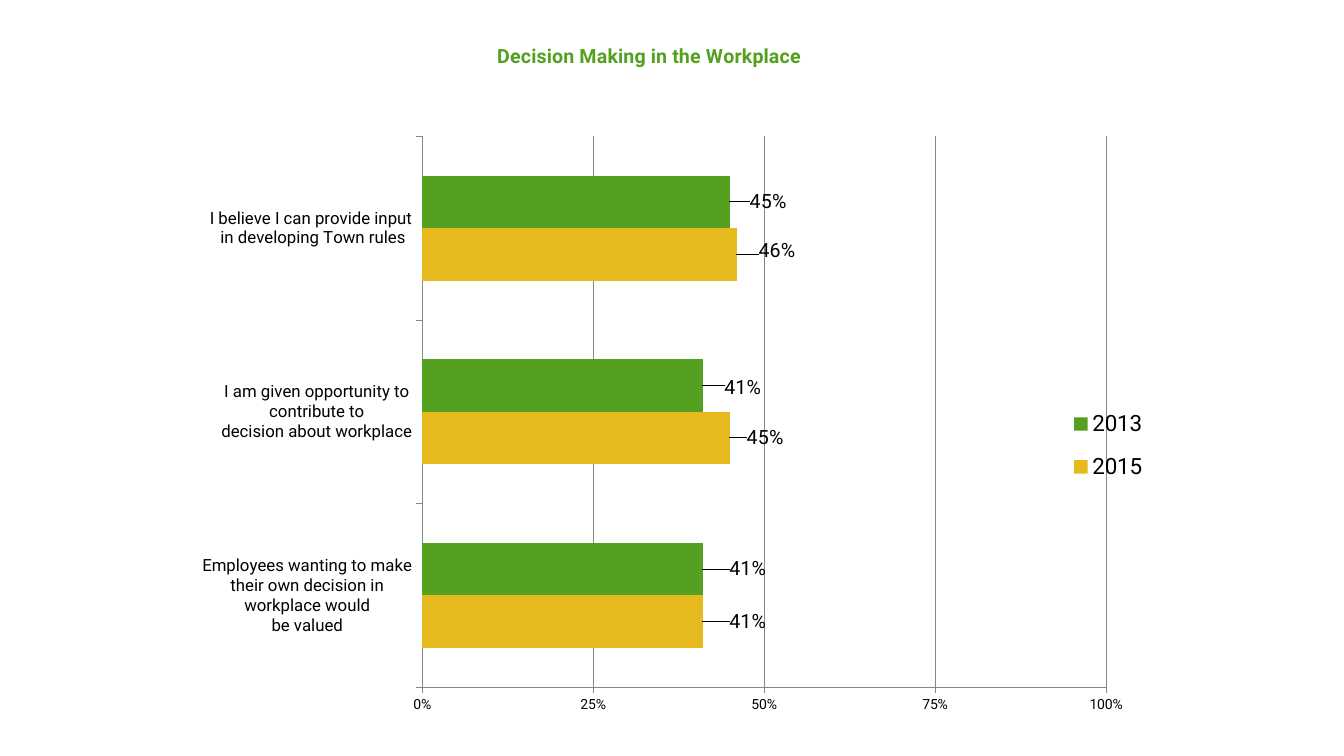
from lxml import etree
from pptx import Presentation
from pptx import util as u
from pptx.chart import data
from pptx.dml import color
from pptx.enum import chart as ch
from pptx.oxml import ns

FONT = "Roboto"
GREEN, GOLD, BLACK, GREY = "54A021", "E6B91E", "000000", "868686"

STATEMENTS = [
    "Employees wanting to make\ntheir own decision in\nworkplace would\nbe valued",
    "I am given opportunity to contribute to\ndecision about workplace",
    "I believe I can provide input\n in developing Town rules",
]
# Year: colour, agreement per statement, label shift (x, y) per statement in % of the chart
SURVEYS = {
    "2015": (GOLD, (0.41, 0.45, 0.46), ((2.3, 0), (1.3, 0), (1.8, -0.5))),
    "2013": (GREEN, (0.41, 0.41, 0.45), ((2.3, 0), (1.8, 0.3), (1.6, 0))),
}


def rgb(value):
    return color.RGBColor.from_string(value)


class SurveySlide:
    """Holds the style and the current slide."""

    def __init__(self, deck, font):
        self.font = font
        self.slide = deck.slides.add_slide(deck.slide_layouts[6])

    def style(self, font, size, colour=BLACK, bold=False):
        font.name, font.size, font.bold = self.font, u.Pt(size), bold
        font.color.rgb = rgb(colour)

    def place(self, part, **settings):
        """Give a chart part a manual layout, in schema order."""
        for old in part.findall(ns.qn("c:layout")):
            part.remove(old)
        leading = [ns.qn(tag) for tag in ("c:idx", "c:tx", "c:legendPos")]
        layout = etree.Element(ns.qn("c:layout"))
        manual = etree.SubElement(layout, ns.qn("c:manualLayout"))
        for tag, value in settings.items():
            etree.SubElement(manual, ns.qn("c:" + tag)).set("val", str(value))
        part.insert(sum(child.tag in leading for child in part), layout)

    def bar_chart(self, left, top, width, height, categories, surveys):
        content = data.CategoryChartData(number_format="0%")
        content.categories = categories
        for year, (_, shares, _) in surveys.items():
            content.add_series(year, shares)
        chart = self.slide.shapes.add_chart(
            ch.XL_CHART_TYPE.BAR_CLUSTERED, u.Pt(left), u.Pt(top),
            u.Pt(width), u.Pt(height), content).chart
        self.style(chart.font, 10)
        plot = chart.plots[0]
        plot.gap_width, plot.overlap, plot.vary_by_categories = 150, 0, False
        self.place(chart._chartSpace.chart.plotArea, layoutTarget="inner",
                   xMode="edge", yMode="edge", x=0.248, y=0.162, w=0.69, h=0.745)
        return chart

    def heading(self, chart, wording, x, y):
        title = chart.chart_title
        run = title.text_frame.paragraphs[0].add_run()
        run.text = wording
        self.style(run.font, 14, GREEN, bold=True)
        self.place(title._element, xMode="edge", yMode="edge", x=x, y=y)
        title._element.find(ns.qn("c:overlay")).set("val", "1")

    def axis(self, axis, size):
        self.style(axis.tick_labels.font, size)
        axis.major_tick_mark = ch.XL_TICK_MARK.OUTSIDE
        axis.minor_tick_mark = ch.XL_TICK_MARK.NONE
        self.line(axis.format.line)

    def line(self, line):
        line.color.rgb, line.width = rgb(GREY), u.Pt(0.75)

    def percent_scale(self, axis):
        axis.minimum_scale, axis.maximum_scale, axis.major_unit = 0, 1, 0.25
        axis.has_major_gridlines = True
        self.line(axis.major_gridlines.format.line)
        axis.tick_labels.number_format = "0%"
        axis.tick_labels.number_format_is_linked = False

    def bars(self, series, colour, shifts):
        series.format.fill.solid()
        series.format.fill.fore_color.rgb = rgb(colour)
        series.invert_if_negative = False
        labels = series.data_labels
        labels.show_value = True
        labels.number_format, labels.number_format_is_linked = "0%", False
        self.style(labels.font, 14)
        for index, (x, y) in enumerate(shifts):
            label = series.points[index].data_label
            self.style(label.font, 14)
            label.position = ch.XL_LABEL_POSITION.OUTSIDE_END
            mark = series._element.xpath(f"c:dLbls/c:dLbl[c:idx/@val='{index}']")[0]
            self.place(mark, x=x / 100, y=y / 100)

    def legend(self, chart, x, y, w, h):
        chart.has_legend = True
        years = chart.legend
        years.position = ch.XL_LEGEND_POSITION.RIGHT
        years.include_in_layout = False
        self.style(years.font, 16)
        self.place(years._element, xMode="edge", yMode="edge", x=x, y=y, w=w, h=h)


def main():
    deck = Presentation()
    deck.slide_width, deck.slide_height = u.Pt(960), u.Pt(540)
    page = SurveySlide(deck, FONT)

    # Chart and its title
    decisions = page.bar_chart(126, 12, 708, 528, STATEMENTS, SURVEYS)
    page.heading(decisions, "Decision Making in the Workplace", 0.32, 0.03)

    # Axes
    page.axis(decisions.category_axis, 12)
    page.axis(decisions.value_axis, 10)
    page.percent_scale(decisions.value_axis)

    # Bars with their labels
    for survey, (colour, _, shifts) in zip(decisions.series, SURVEYS.values()):
        page.bars(survey, colour, shifts)

    # Legend
    page.legend(decisions, 0.9, 0.51, 0.08, 0.14)

    deck.save("out.pptx")


if __name__ == "__main__":
    main()
